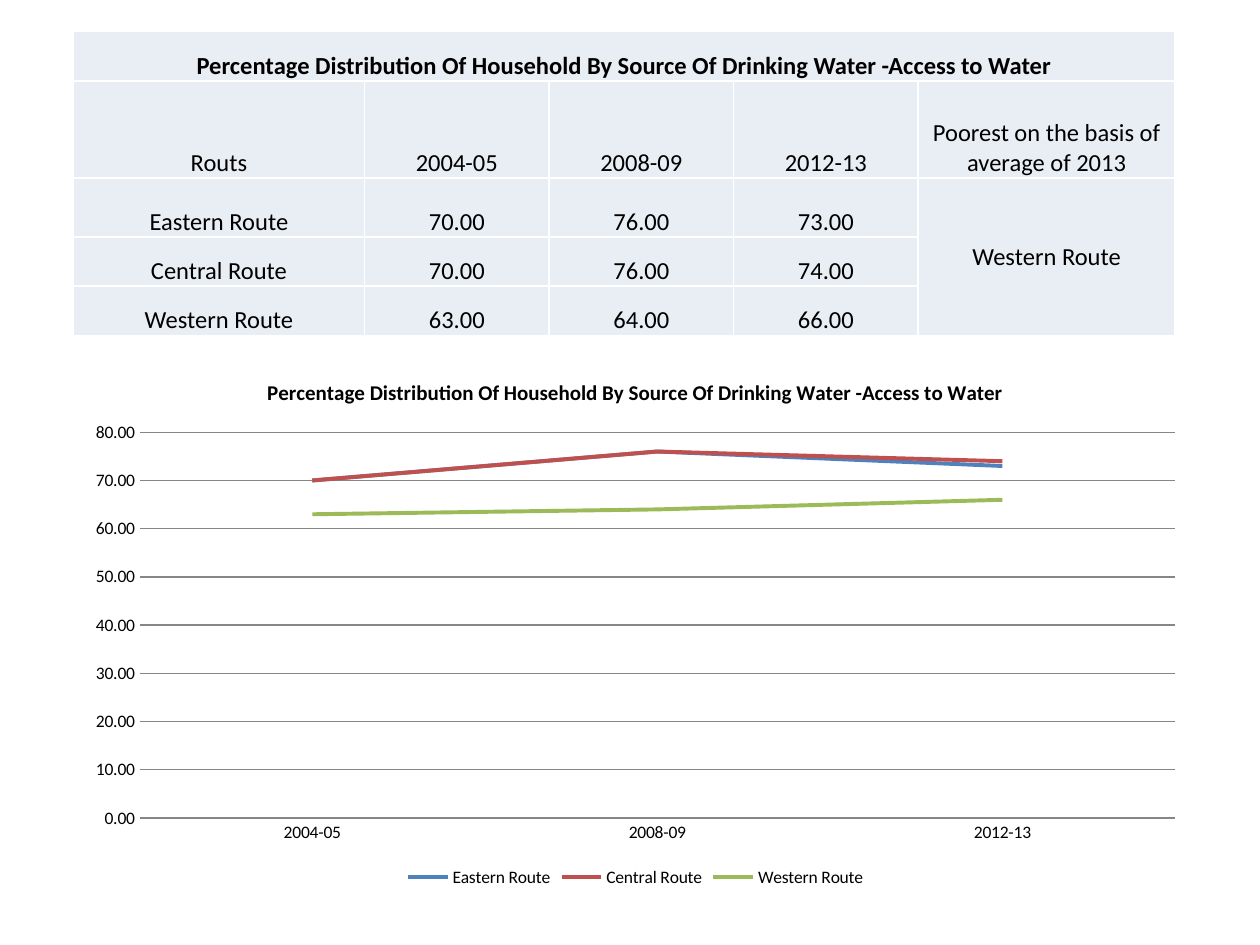
"""Build a slide with a table and a line chart of household access to water by route."""
from pptx import Presentation
from pptx import util as u
from pptx.chart import data as chart_data
from pptx.dml.color import RGBColor
from pptx.enum import chart as ch
from pptx.enum import text


class Theme:
    font = "Calibri"
    ink = RGBColor(0x00, 0x00, 0x00)
    cell = RGBColor(0xE9, 0xED, 0xF4)
    grid = RGBColor(0x86, 0x86, 0x86)
    routes = [RGBColor(0x4F, 0x81, 0xBD), RGBColor(0xC0, 0x50, 0x4D), RGBColor(0x9B, 0xBB, 0x59)]
    table_size = u.Pt(14)
    title_size = u.Pt(12)
    chart_size = u.Pt(10)
    route_line = u.Pt(2.25)
    thin_line = u.Pt(0.75)


def style_font(font, size, bold=False):
    font.name = Theme.font
    font.size = size
    font.bold = bold
    font.color.rgb = Theme.ink


heading = "Percentage Distribution Of Household By Source Of Drinking Water -Access to Water"
years = ["2004-05", "2008-09", "2012-13"]
access = {
    "Eastern Route": [70, 76, 73],
    "Central Route": [70, 76, 74],
    "Western Route": [63, 64, 66],
}
poorest = "Western Route"

deck = Presentation()
deck.slide_width, deck.slide_height = u.Cm(25.4), u.Cm(19.05)
slide = deck.slides.add_slide(deck.slide_layouts[6])

rows = [[heading, "", "", "", ""], ["Routs", *years, "Poorest on the basis of average of 2013"]]
for route, shares in access.items():
    rows.append([route, *(f"{share:.2f}" for share in shares), ""])
rows[2][-1] = poorest

column_widths = [5.87, 3.72, 3.72, 3.72, 5.18]
row_heights = [0.99, 1.96, 1.19, 0.99, 0.99]
water_table = slide.shapes.add_table(
    len(rows), len(column_widths), u.Cm(1.48), u.Cm(0.64),
    u.Cm(sum(column_widths)), u.Cm(sum(row_heights))).table
water_table.first_row = False
water_table.horz_banding = False
for column, width in zip(water_table.columns, column_widths):
    column.width = u.Cm(width)
for row, height in zip(water_table.rows, row_heights):
    row.height = u.Cm(height)
water_table.cell(0, 0).merge(water_table.cell(0, 4))
water_table.cell(2, 4).merge(water_table.cell(4, 4))

for r, row in enumerate(rows):
    for c, entry in enumerate(row):
        cell = water_table.cell(r, c)
        cell.fill.solid()
        cell.fill.fore_color.rgb = Theme.cell
        if cell.is_spanned:
            continue
        cell.margin_left = cell.margin_right = cell.margin_top = u.Cm(0.03)
        cell.margin_bottom = 0
        cell.vertical_anchor = text.MSO_ANCHOR.MIDDLE if cell.is_merge_origin and r else text.MSO_ANCHOR.BOTTOM
        cell.text_frame.text = entry
        paragraph = cell.text_frame.paragraphs[0]
        paragraph.alignment = text.PP_ALIGN.CENTER
        style_font(paragraph.runs[0].font, Theme.table_size, bold=r == 0)

trend = chart_data.CategoryChartData(number_format="0.00")
trend.categories = years
for route, shares in access.items():
    trend.add_series(route, shares)
water_chart = slide.shapes.add_chart(
    ch.XL_CHART_TYPE.LINE, u.Cm(1.48), u.Cm(7.19), u.Cm(22.66), u.Cm(10.8), trend).chart
style_font(water_chart.font, Theme.chart_size)

water_chart.has_title = True
water_chart.chart_title.include_in_layout = False
title = water_chart.chart_title.text_frame
title.text = heading
style_font(title.paragraphs[0].runs[0].font, Theme.title_size, bold=True)

water_chart.has_legend = True
water_chart.legend.position = ch.XL_LEGEND_POSITION.BOTTOM
water_chart.legend.include_in_layout = False

share_axis, year_axis = water_chart.value_axis, water_chart.category_axis
for axis in (share_axis, year_axis):
    axis.major_tick_mark = axis.minor_tick_mark = ch.XL_TICK_MARK.NONE
share_axis.minimum_scale, share_axis.maximum_scale, share_axis.major_unit = 0, 80, 10
share_axis.tick_labels.number_format = "0.00"
share_axis.tick_labels.number_format_is_linked = False
share_axis.format.line.fill.background()
share_axis.has_major_gridlines = True
for rule in (share_axis.major_gridlines.format.line, year_axis.format.line):
    rule.color.rgb = Theme.grid
    rule.width = Theme.thin_line

water_chart.plots[0].vary_by_categories = False
for series, color in zip(water_chart.plots[0].series, Theme.routes):
    series.smooth = False
    series.marker.style = ch.XL_MARKER_STYLE.NONE
    series.format.line.color.rgb = color
    series.format.line.width = Theme.route_line

deck.save("out.pptx")
